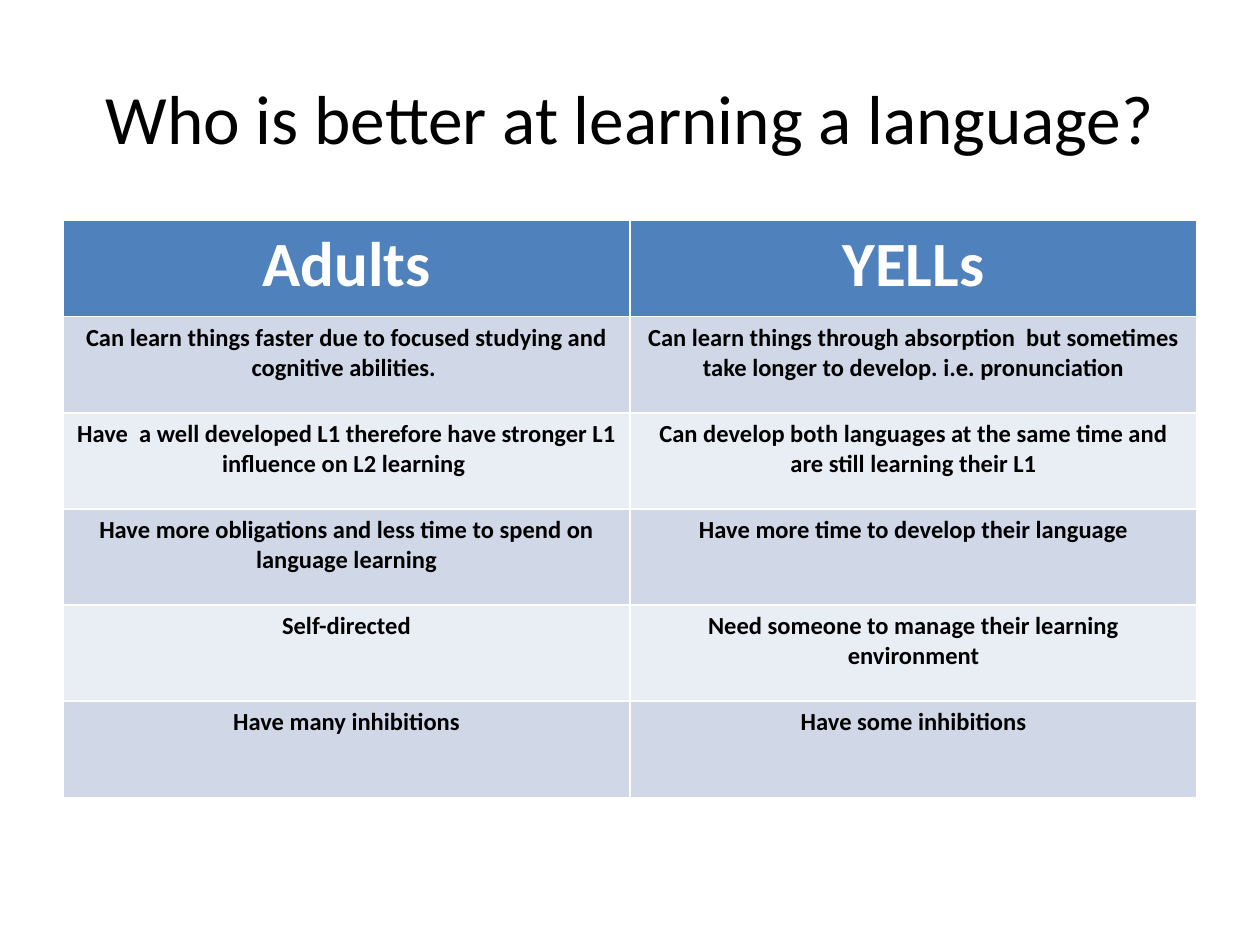
"""Build a slide comparing adults and young learners in a two-column table."""
from pptx import Presentation
from pptx.dml.color import RGBColor
from pptx.enum.text import MSO_ANCHOR, PP_ALIGN
from pptx.util import Inches, Pt

CENTER = PP_ALIGN.CENTER
MIDDLE = MSO_ANCHOR.MIDDLE
FONT = "Calibri"
COLORS = {
    "text": "000000",
    "header_text": "FFFFFF",
    "header": "4F81BD",
    "odd_row": "D0D8E8",
    "even_row": "E9EDF4",
}
ROWS = [
    ("Adults", "YELLs"),
    ("Can learn things faster due to focused studying and cognitive abilities. ",
     "Can learn things through absorption  but sometimes take longer to develop. i.e. pronunciation"),
    ("Have  a well developed L1 therefore have stronger L1 influence on L2 learning ",
     "Can develop both languages at the same time and are still learning their L1"),
    ("Have more obligations and less time to spend on language learning",
     "Have more time to develop their language"),
    ("Self-directed", "Need someone to manage their learning environment"),
    ("Have many inhibitions", "Have some inhibitions"),
]


def write(text_frame, text, size, color, bold=False):
    text_frame.text = text
    paragraph = text_frame.paragraphs[0]
    paragraph.alignment = CENTER
    paragraph.font.name = FONT
    paragraph.font.size = Pt(size)
    paragraph.font.bold = bold
    paragraph.font.color.rgb = RGBColor.from_string(COLORS[color])


presentation = Presentation()
presentation.slide_width = Inches(10)
presentation.slide_height = Inches(7.5)
slide = presentation.slides.add_slide(presentation.slide_layouts[6])

title = slide.shapes.add_textbox(Inches(0.5), Inches(0.3), Inches(9), Inches(1.25))
title.text_frame.word_wrap = True
title.text_frame.vertical_anchor = MIDDLE
write(title.text_frame, "Who is better at learning a language?", 39.6, "text")

table = slide.shapes.add_table(
    len(ROWS), 2, Inches(0.5), Inches(1.75), Inches(9), Inches(4.58)
).table
for row_index, row in enumerate(ROWS):
    if row_index == 0:
        fill, size, color = "header", 36, "header_text"
    else:
        fill = "odd_row" if row_index % 2 else "even_row"
        size, color = 14, "text"
    for column_index, text in enumerate(row):
        cell = table.cell(row_index, column_index)
        cell.fill.solid()
        cell.fill.fore_color.rgb = RGBColor.from_string(COLORS[fill])
        write(cell.text_frame, text, size, color, bold=True)

presentation.save("out.pptx")
